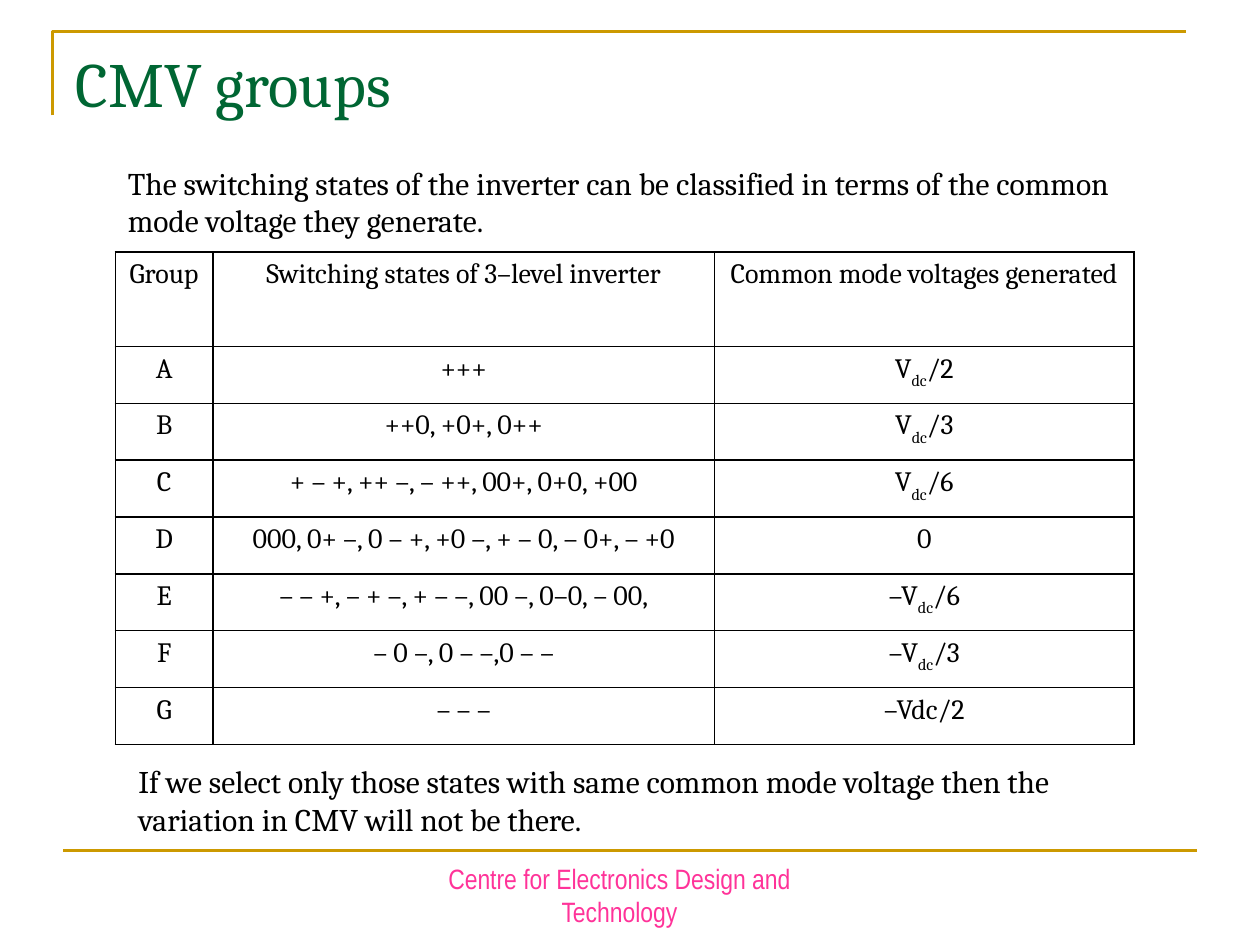
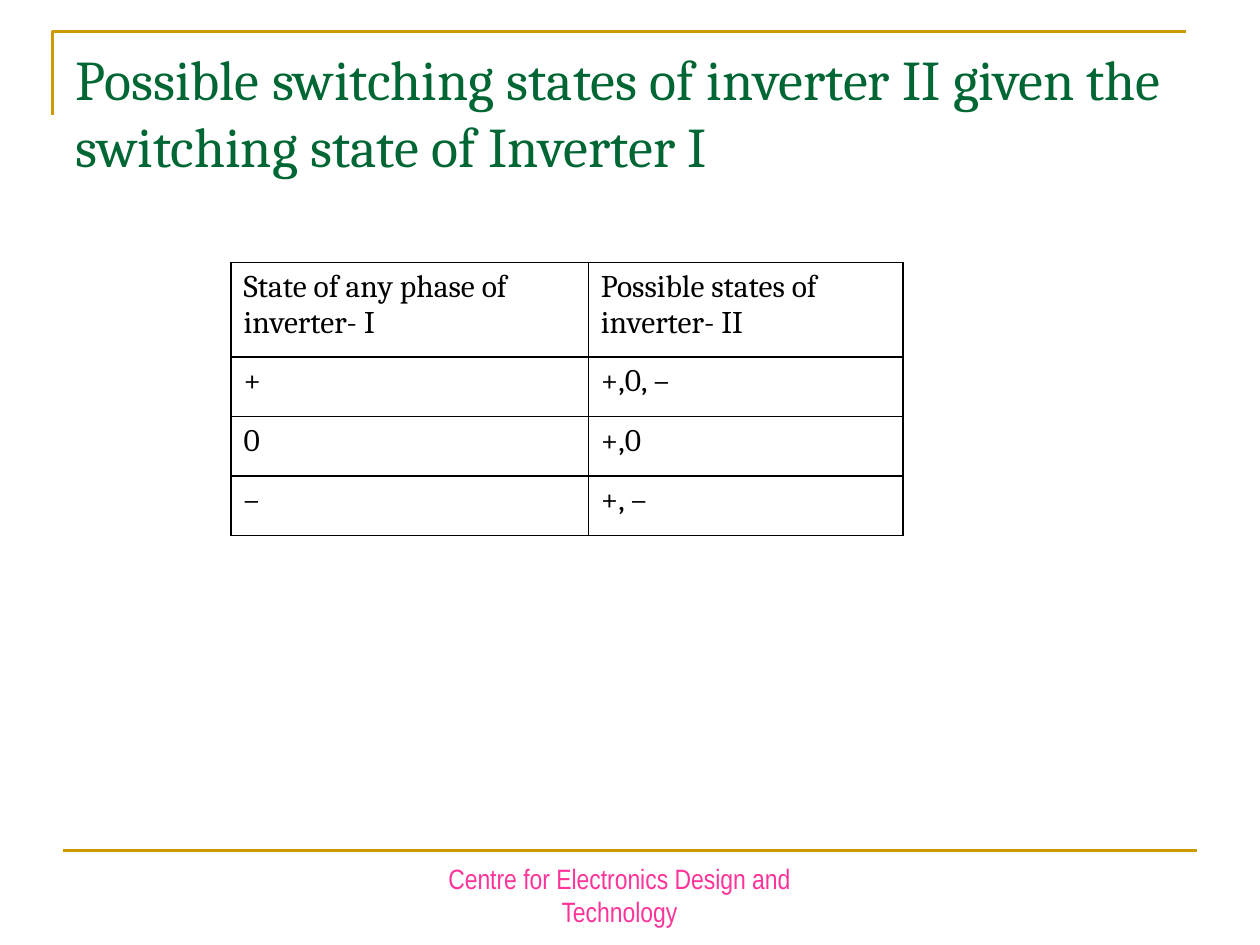
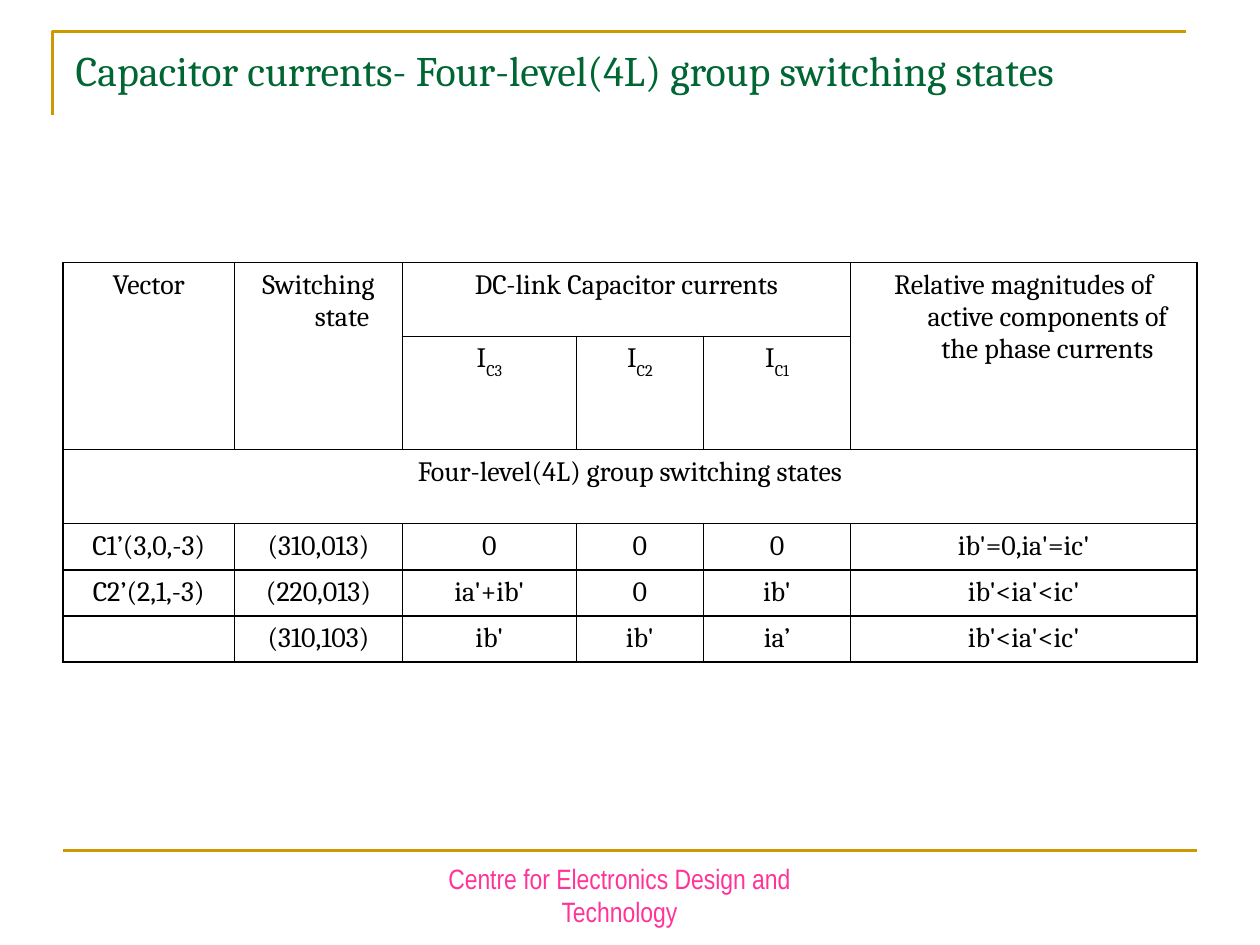
from lxml.etree import SubElement
from pptx import Presentation
from pptx.dml.color import RGBColor
from pptx.enum.shapes import MSO_CONNECTOR
from pptx.enum.text import MSO_ANCHOR, MSO_AUTO_SIZE, PP_ALIGN
from pptx.oxml.ns import qn
from pptx.util import Pt

GOLD = RGBColor(0xCC, 0x99, 0x00)
GREEN = RGBColor(0x00, 0x66, 0x33)
PINK = RGBColor(0xFF, 0x33, 0x99)
BLACK = RGBColor(0, 0, 0)
SERIF = "Cambria"
NARROW = "Arial Narrow"
HANG = 27


def write(para, text, size, color=BLACK, font=SERIF):
    """Add text run by run; parts between underscores are subscripts."""
    for i, part in enumerate(text.split("_")):
        if not part:
            continue
        run = para.add_run()
        run.text = part
        run.font.size = Pt(size)
        run.font.name = font
        run.font.color.rgb = color
        if i % 2:
            run.font._element.set("baseline", "-30000")


def add_text(slide, box, text, size, color=BLACK, font=SERIF,
             align=PP_ALIGN.LEFT, anchor=MSO_ANCHOR.TOP):
    frame = slide.shapes.add_textbox(*map(Pt, box)).text_frame
    frame.word_wrap = True
    frame.vertical_anchor = anchor
    para = frame.paragraphs[0]
    para.alignment = align
    write(para, text, size, color, font)


# Parts shared by all slides
def add_frame(slide):
    shapes = slide.shapes
    pen = shapes.build_freeform(Pt(30), Pt(66), scale=1.0)
    pen.add_line_segments([(Pt(30), Pt(18)), (Pt(678), Pt(18))], close=False)
    edge = pen.convert_to_shape()
    edge.shadow.inherit = False
    edge.fill.background()
    rule = shapes.add_connector(MSO_CONNECTOR.STRAIGHT,
                                Pt(36), Pt(486), Pt(684), Pt(486))
    SubElement(rule._element.spPr, qn("a:effectLst"))
    for item in (edge, rule):
        item.line.color.rgb = GOLD
        item.line.width = Pt(1.5)
    add_text(slide, (240, 498, 228, 36),
             "Centre for Electronics Design and Technology", 16,
             PINK, NARROW, PP_ALIGN.CENTER, MSO_ANCHOR.BOTTOM)


def add_page(deck, text, size, height):
    slide = deck.slides.add_slide(deck.slide_layouts[5])
    add_frame(slide)
    title = slide.shapes.title
    title.left, title.top = Pt(36), Pt(21.6)
    title.width, title.height = Pt(648), Pt(height)
    frame = title.text_frame
    frame.word_wrap = True
    frame.auto_size = MSO_AUTO_SIZE.NONE
    frame.vertical_anchor = MSO_ANCHOR.TOP
    para = frame.paragraphs[0]
    para.alignment = PP_ALIGN.LEFT
    write(para, text, size, GREEN)
    return slide


# Tables
def add_border(cell):
    props = cell._tc.get_or_add_tcPr()
    for side in ("a:lnL", "a:lnR", "a:lnT", "a:lnB"):
        line = SubElement(props, qn(side), w=str(Pt(1)))
        fill = SubElement(line, qn("a:solidFill"))
        SubElement(fill, qn("a:srgbClr"), val=str(BLACK))


def add_grid(slide, left, top, cols, rows, data, size, hang=True, spans=()):
    table = slide.shapes.add_table(
        len(rows), len(cols), Pt(left), Pt(top),
        Pt(sum(cols)), Pt(sum(rows))).table
    table.first_row = table.horz_banding = False
    for col, width in zip(table.columns, cols):
        col.width = Pt(width)
    for row, height in zip(table.rows, rows):
        row.height = Pt(height)
    for r, line in enumerate(data):
        for c, text in enumerate(line):
            cell = table.cell(r, c)
            add_border(cell)
            cell.fill.background()
            para = cell.text_frame.paragraphs[0]
            if hang:
                para.alignment = PP_ALIGN.CENTER
                props = para._p.get_or_add_pPr()
                props.set("marL", str(Pt(HANG)))
                props.set("indent", str(Pt(-HANG)))
            write(para, text, size)
            if not text:
                SubElement(para._p, qn("a:endParaRPr"), sz=str(size * 100))
    for r, c, down, across in spans:
        table.cell(r, c).merge(table.cell(r + down - 1, c + across - 1))


# Slides
def add_groups(deck):
    slide = add_page(deck, "CMV groups", 36, 62)
    data = [
        ("Group", "Switching states of 3–level inverter",
         "Common mode voltages generated"),
        ("A", "+++", "V_dc_/2"),
        ("B", "++0, +0+, 0++", "V_dc_/3"),
        ("C", "+ – +, ++ –, – ++, 00+, 0+0, +00", "V_dc_/6"),
        ("D", "000, 0+ –, 0 – +, +0 –, + – 0, – 0+, – +0", "0"),
        ("E", "– – +, – + –, + – –, 00 –, 0–0, – 00,", "–V_dc_/6"),
        ("F", "– 0 –, 0 – –,0 – –", "–V_dc_/3"),
        ("G", "– – –", "–Vdc/2"),
    ]
    add_grid(slide, 66, 144, (55.6, 286.8, 239.6), [54] + [32.5] * 7, data, 16)
    add_text(slide, (66, 90, 576, 50.4),
             "The switching states of the inverter can be classified in terms "
             "of the common mode voltage they generate.", 18)
    add_text(slide, (72, 432, 576, 50.4),
             "If we select only those states with same common mode voltage "
             "then the variation in CMV will not be there.", 18)


def add_states(deck):
    slide = add_page(deck, "Possible switching states of inverter II given "
                     "the switching state of Inverter I", 32, 90)
    data = [
        ("State of any phase of inverter- I",
         "Possible states of inverter- II"),
        ("+", "+,0, –"),
        ("0", "+,0"),
        ("–", "+, –"),
    ]
    add_grid(slide, 132, 150, (204.2, 179.8), [54] + [34] * 3, data, 18,
             hang=False)


def add_currents(deck):
    slide = add_page(deck, "Capacitor currents- Four-level(4L) group "
                     "switching states", 24, 44)
    data = [
        ("Vector", "Switching state", "DC-link Capacitor currents", "", "",
         "Relative magnitudes of active components of the phase currents"),
        ("", "", "I_C3", "I_C2", "I_C1", ""),
        ("Four-level(4L) group switching states", "", "", "", "", ""),
        ("C1’(3,0,-3)", "(310,013)", "0", "0", "0", "ib'=0,ia'=ic'"),
        ("C2’(2,1,-3)", "(220,013)", "ia'+ib'", "0", "ib'", "ib'<ia'<ic'"),
        ("", "(310,103)", "ib'", "ib'", "ia’", "ib'<ia'<ic'"),
    ]
    spans = [(0, 0, 2, 1), (0, 1, 2, 1), (0, 2, 1, 3), (0, 5, 2, 1),
             (2, 0, 1, 6)]
    add_grid(slide, 36, 150, (98, 96, 99.4, 72.6, 84.2, 197.8),
             [42.2, 62.8, 42.2] + [25.7] * 3, data, 16, spans=spans)


def main():
    deck = Presentation()
    deck.slide_width, deck.slide_height = Pt(720), Pt(540)
    add_groups(deck)
    add_states(deck)
    add_currents(deck)
    deck.save("out.pptx")


if __name__ == "__main__":
    main()
